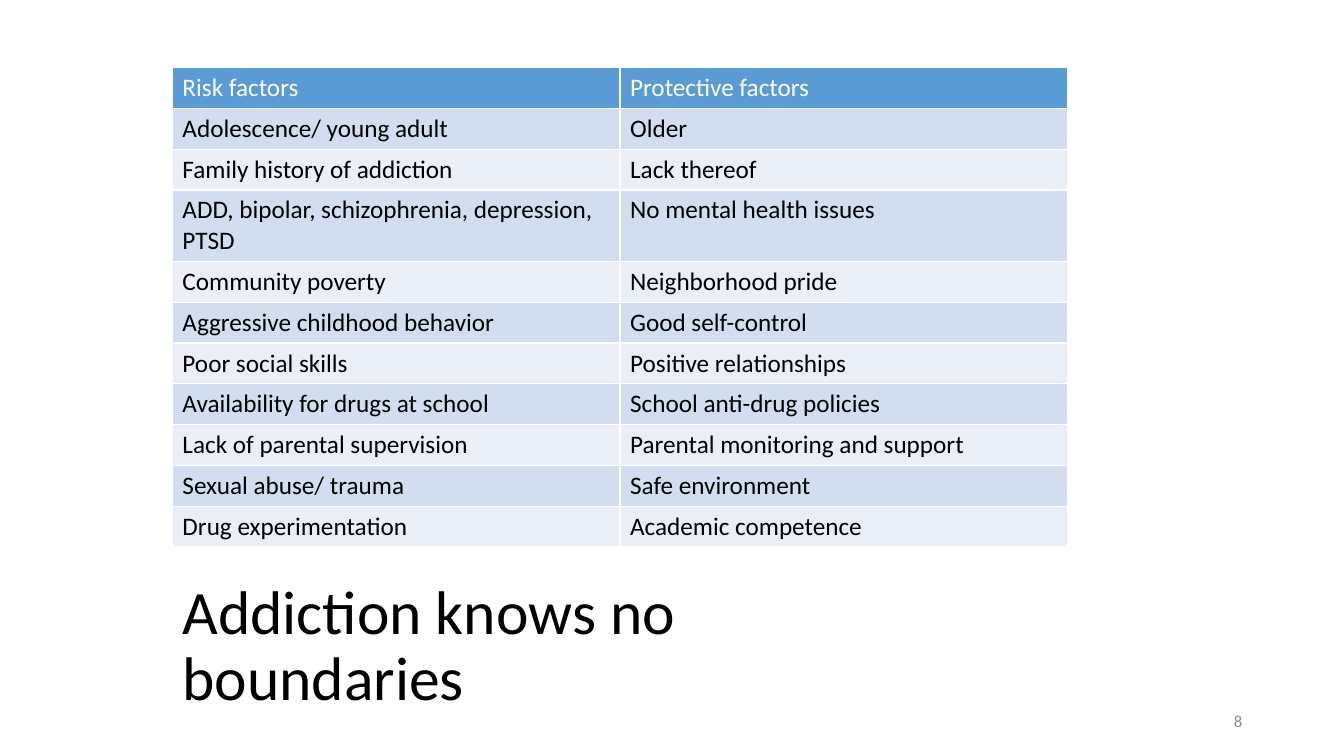
from lxml import etree
from pptx import Presentation
from pptx.dml.color import RGBColor
from pptx.enum.text import MSO_ANCHOR, PP_ALIGN
from pptx.oxml.ns import qn
from pptx.util import Inches, Pt

MIDDLE = MSO_ANCHOR.MIDDLE
RIGHT = PP_ALIGN.RIGHT
TITLE_ONLY = 5
FONT = "Calibri"
COLORS = {
    "text": "000000",
    "white": "FFFFFF",
    "header": "5B9BD5",
    "band_dark": "D2DEEF",
    "band_light": "EAEFF7",
    "number": "8C8C8C",
}
LEFT = 1.71
COLUMN_WIDTH = 4.44
ROW_HEIGHT = 0.405
TALL_ROW, TALL_HEIGHT = 3, 0.71
FACTORS = [
    ("Risk factors", "Protective factors"),
    ("Adolescence/ young adult", "Older"),
    ("Family history of addiction", "Lack thereof"),
    ("ADD, bipolar, schizophrenia, depression, PTSD", "No mental health issues"),
    ("Community poverty", "Neighborhood pride"),
    ("Aggressive childhood behavior", "Good self-control"),
    ("Poor social skills", "Positive relationships"),
    ("Availability for drugs at school", "School anti-drug policies"),
    ("Lack of parental supervision", "Parental monitoring and support"),
    ("Sexual abuse/ trauma", "Safe environment"),
    ("Drug experimentation", "Academic competence"),
]


def rgb(name):
    return RGBColor.from_string(COLORS[name])


def format_paragraph(p, size, color):
    p.font.name = FONT
    p.font.size = Pt(size)
    p.font.bold = False
    p.font.color.rgb = rgb(color)


def place(sp, left, top, width, height):
    sp.left, sp.top = Inches(left), Inches(top)
    sp.width, sp.height = Inches(width), Inches(height)


def add_title(slide, text):
    sp = slide.shapes.title
    place(sp, LEFT, 5.7, 7.97, 1.45)
    tf = sp.text_frame
    tf.text = text
    tf.word_wrap = True
    tf.vertical_anchor = MIDDLE
    p = tf.paragraphs[0]
    p.alignment = PP_ALIGN.LEFT
    p.line_spacing = 0.9
    format_paragraph(p, 44, "text")


def add_slide_number(slide, text):
    sp = slide.shapes.add_textbox(Inches(9.42), Inches(6.95), Inches(3), Inches(0.4))
    tf = sp.text_frame
    tf.text = text
    tf.word_wrap = True
    tf.vertical_anchor = MIDDLE
    p = tf.paragraphs[0]
    p.alignment = RIGHT
    format_paragraph(p, 12, "number")


def set_borders(cell, color):
    """Draw a one-point line on all four sides; call before filling the cell."""
    tc_pr = cell._tc.get_or_add_tcPr()
    for side in ("lnL", "lnR", "lnT", "lnB"):
        ln = etree.SubElement(tc_pr, qn(f"a:{side}"), w=str(Pt(1)))
        fill = etree.SubElement(ln, qn("a:solidFill"))
        etree.SubElement(fill, qn("a:srgbClr"), val=COLORS[color])


def format_cell(cell, text, fill, color):
    set_borders(cell, "white")
    cell.fill.solid()
    cell.fill.fore_color.rgb = rgb(fill)
    cell.text = text
    format_paragraph(cell.text_frame.paragraphs[0], 18, color)


def add_factor_table(slide, rows):
    columns = len(rows[0])
    table = slide.shapes.add_table(
        len(rows), columns, Inches(LEFT), Inches(0.67),
        Inches(columns * COLUMN_WIDTH), Inches(len(rows) * ROW_HEIGHT),
    ).table
    for column in table.columns:
        column.width = Inches(COLUMN_WIDTH)
    for i, texts in enumerate(rows):
        table.rows[i].height = Inches(TALL_HEIGHT if i == TALL_ROW else ROW_HEIGHT)
        if i == 0:
            fill, color = "header", "white"
        else:
            fill, color = ("band_dark" if i % 2 else "band_light"), "text"
        for j, text in enumerate(texts):
            format_cell(table.cell(i, j), text, fill, color)


def main():
    prs = Presentation()
    prs.slide_width, prs.slide_height = Inches(13.33), Inches(7.5)
    slide = prs.slides.add_slide(prs.slide_layouts[TITLE_ONLY])
    add_title(slide, "Addiction knows no boundaries")
    add_slide_number(slide, "8")
    add_factor_table(slide, FACTORS)
    prs.save("out.pptx")


if __name__ == "__main__":
    main()
